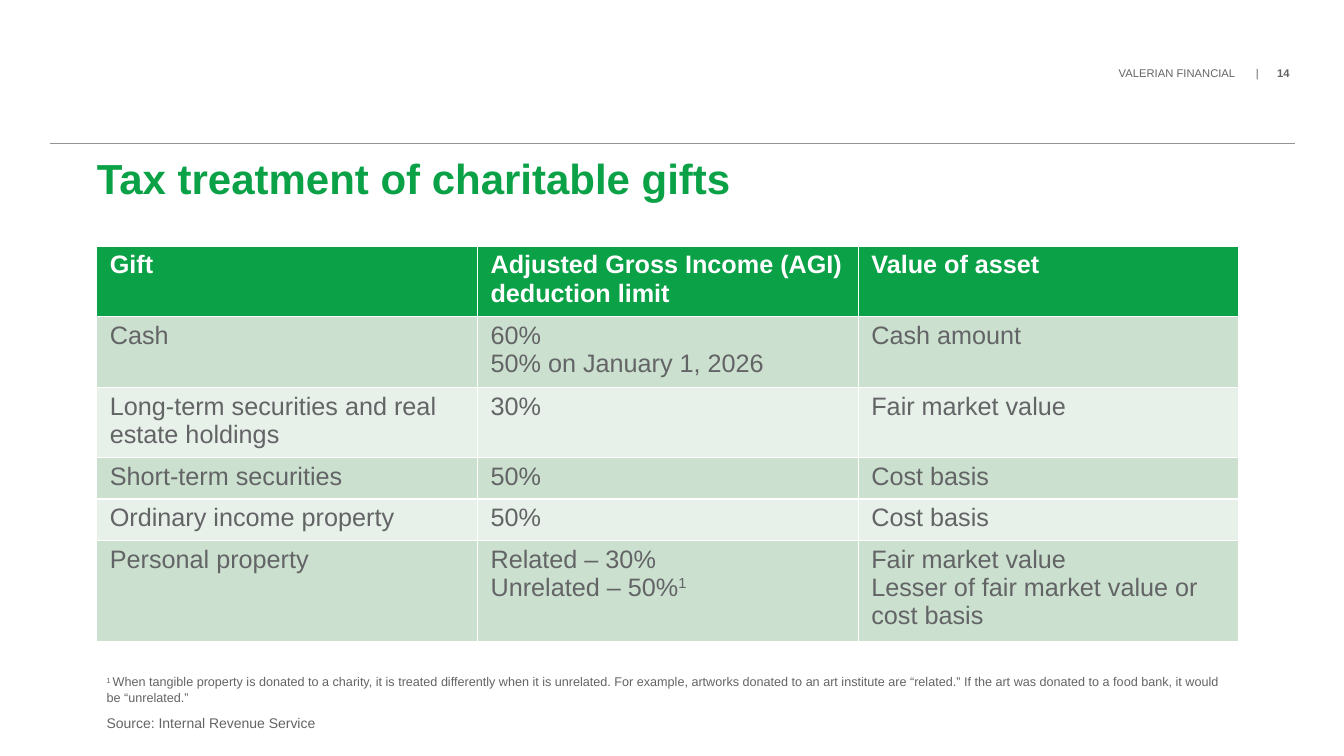
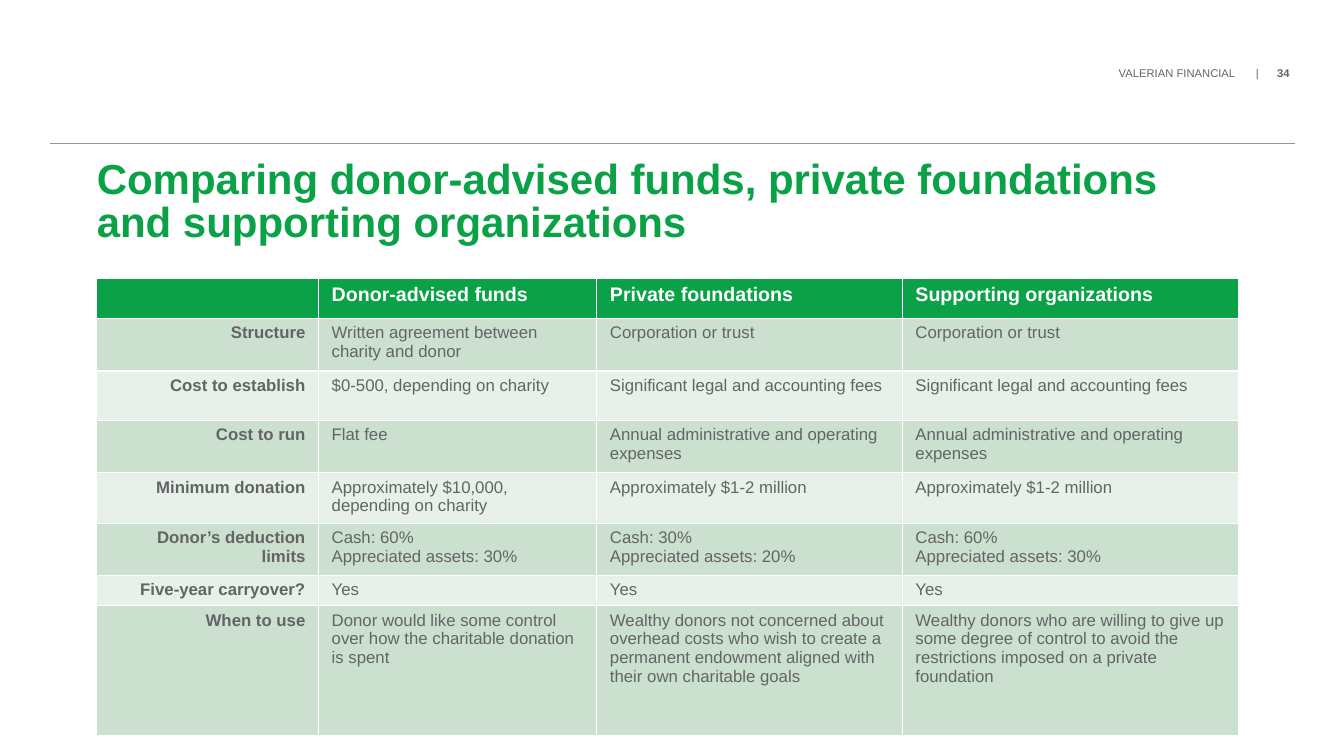
from lxml import etree
from pptx import Presentation
from pptx.dml.color import RGBColor
from pptx.enum.shapes import MSO_CONNECTOR
from pptx.enum.text import MSO_ANCHOR, MSO_AUTO_SIZE, PP_ALIGN
from pptx.oxml.ns import qn
from pptx.util import Inches, Pt

GREEN = RGBColor(0x0A, 0xA1, 0x47)
GRAY = RGBColor(0x63, 0x64, 0x66)
RULE_GRAY = RGBColor(0x92, 0x94, 0x97)
WHITE = RGBColor(0xFF, 0xFF, 0xFF)
BANDS = (RGBColor(0xE7, 0xF0, 0xE9), RGBColor(0xCC, 0xE0, 0xCF))
FONT = "Arial"
LEFT, WIDTH = 0.96, 11.33

GIFT_ROWS = [
    ["Gift", "Adjusted Gross Income (AGI) deduction limit", "Value of asset"],
    ["Cash", "60%\n50% on January 1, 2026", "Cash amount"],
    ["Long-term securities and real estate holdings", "30%", "Fair market value"],
    ["Short-term securities", "50%", "Cost basis"],
    ["Ordinary income property", "50%", "Cost basis"],
    ["Personal property", "Related – 30%\nUnrelated – 50%^1^",
     "Fair market value\nLesser of fair market value or cost basis"],
]
VEHICLE_ROWS = [
    ["", "Donor-advised funds", "Private foundations", "Supporting organizations"],
    ["Structure", "Written agreement between charity and donor",
     "Corporation or trust", "Corporation or trust"],
    ["Cost to establish", "$0-500, depending on charity",
     "Significant legal and accounting fees", "Significant legal and accounting fees"],
    ["Cost to run", "Flat fee", "Annual administrative and operating expenses",
     "Annual administrative and operating expenses"],
    ["Minimum donation", "Approximately $10,000, depending on charity",
     "Approximately $1-2 million", "Approximately $1-2 million"],
    ["Donor’s deduction limits", "Cash: 60%\nAppreciated assets: 30%",
     "Cash: 30%\nAppreciated assets: 20%", "Cash: 60%\nAppreciated assets: 30%"],
    ["Five-year carryover?", "Yes", "Yes", "Yes"],
    ["When to use",
     "Donor would like some control over how the charitable donation is spent",
     "Wealthy donors not concerned about overhead costs who wish to create a permanent "
     "endowment aligned with their own charitable goals",
     "Wealthy donors who are willing to give up some degree of control to avoid the "
     "restrictions imposed on a private foundation"],
]
PAGES = [
    {"number": "14", "title": "Tax treatment of charitable gifts", "rows": GIFT_ROWS,
     "top": 2.44, "widths": [WIDTH / 3] * 3, "heights": [0.41] * 6,
     "header_size": 18, "body_size": 18, "row_labels": False,
     "notes": [
         (6.64, WIDTH, 0.4, 9,
          "^1 ^When tangible property is donated to a charity, it is treated differently "
          "when it is unrelated. For example, artworks donated to an art institute are "
          "“related.” If the art was donated to a food bank, it would be “unrelated.”"),
         (7.04, 6.93, 0.27, 10, "Source: Internal Revenue Service"),
     ]},
    {"number": "34",
     "title": "Comparing donor-advised funds, private foundations and supporting organizations",
     "rows": VEHICLE_ROWS, "top": 2.76, "widths": [2.2, 2.76, 3.03, 3.34],
     "heights": [0.37, 0.52, 0.49, 0.52, 0.49, 0.52, 0.3, 1.29],
     "header_size": 14, "body_size": 12, "row_labels": True, "notes": []},
]


def write(frame, text, size, color=GRAY, bold=False, align=PP_ALIGN.LEFT):
    """Fill a text frame, one paragraph per line; text between carets is superscript."""
    frame.word_wrap = True
    for index, line in enumerate(text.split("\n")):
        paragraph = frame.add_paragraph() if index else frame.paragraphs[0]
        paragraph.alignment = align
        for position, piece in enumerate(line.split("^")):
            if line and not piece:
                continue
            run = paragraph.add_run()
            run.text = piece
            for key, value in {"name": FONT, "size": Pt(size), "bold": bold}.items():
                setattr(run.font, key, value)
            run.font.color.rgb = color
            if position % 2:
                run.font._element.set("baseline", "30000")


def set_margins(target, horizontal, vertical):
    for side in ("left", "right"):
        setattr(target, f"margin_{side}", Inches(horizontal))
    for side in ("top", "bottom"):
        setattr(target, f"margin_{side}", Inches(vertical))


prs = Presentation()
prs.slide_width, prs.slide_height = Inches(13.33), Inches(7.5)

for page in PAGES:
    slide = prs.slides.add_slide(prs.slide_layouts[5])

    # Running header: company, divider and page number on tab stops
    header = slide.shapes.add_textbox(Inches(10.53), Inches(0.64), Inches(2.26), Inches(0.15))
    set_margins(header.text_frame, 0, 0.02)
    running_line = header.text_frame.paragraphs[0]
    tab_list = etree.SubElement(running_line._p.get_or_add_pPr(), qn("a:tabLst"))
    for stop in (1.36, 1.57):
        etree.SubElement(tab_list, qn("a:tab"), pos=str(Inches(stop)), algn="l")
    write(header.text_frame, "VALERIAN FINANCIAL\t|\t", 8, align=PP_ALIGN.RIGHT)
    number = running_line.add_run()
    number.text = page["number"]
    for key, value in {"name": FONT, "size": Pt(8), "bold": True}.items():
        setattr(number.font, key, value)
    number.font.color.rgb = GRAY

    rule = slide.shapes.add_connector(
        MSO_CONNECTOR.STRAIGHT, Inches(0.5), Inches(1.42), Inches(12.84), Inches(1.42))
    rule.line.color.rgb = RULE_GRAY
    rule.line.width = Pt(0.5)
    etree.SubElement(rule._element.spPr, qn("a:effectLst"))

    title = slide.shapes.title
    title.left, title.top = Inches(LEFT), Inches(1.58)
    title.width, title.height = Inches(WIDTH), Inches(1.05)
    set_margins(title.text_frame, 0, 0)
    title.text_frame.vertical_anchor = MSO_ANCHOR.TOP
    title.text_frame.auto_size = MSO_AUTO_SIZE.NONE
    write(title.text_frame, page["title"], 30, GREEN, bold=True)
    title.text_frame.paragraphs[0].line_spacing = Pt(31)

    rows = page["rows"]
    table = slide.shapes.add_table(
        len(rows), len(rows[0]), Inches(LEFT), Inches(page["top"]),
        Inches(WIDTH), Inches(sum(page["heights"]))).table
    for column, width in zip(table.columns, page["widths"]):
        column.width = Inches(width)
    for r, (row, height) in enumerate(zip(rows, page["heights"])):
        table.rows[r].height = Inches(height)
        for c, text in enumerate(row):
            cell = table.cell(r, c)
            set_margins(cell, 0.13, 0.05)
            cell.fill.solid()
            if r == 0:
                cell.fill.fore_color.rgb = GREEN
                write(cell.text_frame, text, page["header_size"], WHITE, bold=True)
            else:
                cell.fill.fore_color.rgb = BANDS[r % 2]
                is_label = page["row_labels"] and c == 0
                write(cell.text_frame, text, page["body_size"], bold=is_label,
                      align=PP_ALIGN.RIGHT if is_label else PP_ALIGN.LEFT)

    for top, width, height, size, text in page["notes"]:
        note = slide.shapes.add_textbox(
            Inches(LEFT), Inches(top), Inches(width), Inches(height))
        write(note.text_frame, text, size)

prs.save("out.pptx")
